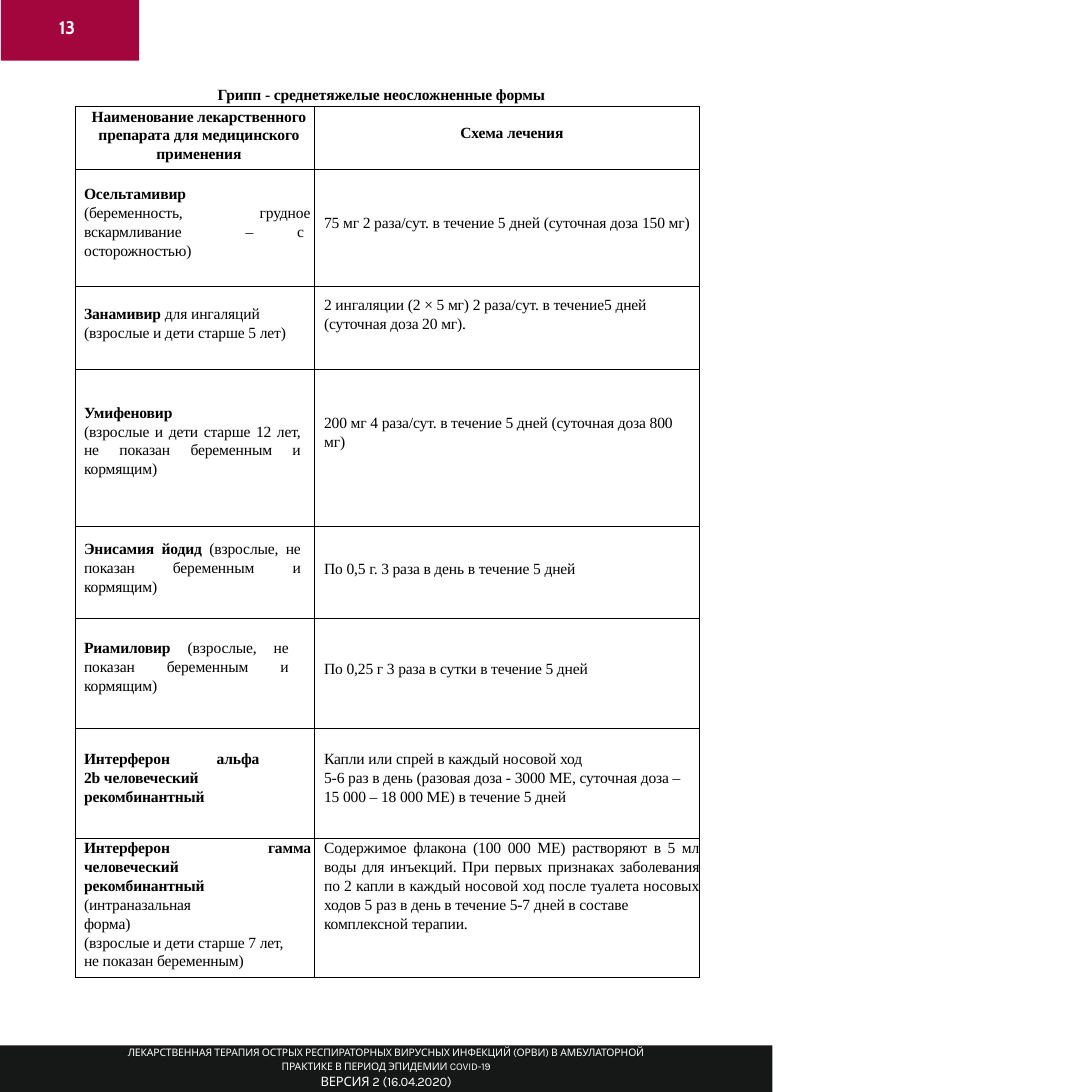
from lxml import etree
from pptx import Presentation, util as u
from pptx.dml.color import RGBColor
from pptx.enum import shapes, text
from pptx.oxml.ns import qn

SIDE = 11.69
COLORS = {"ink": "000000", "light": "FFFFFF", "bar": "161717", "tab": "A3053D"}
SERIF = "Times New Roman"
LEFT, CENTER, JUSTIFY = (text.PP_ALIGN.LEFT, text.PP_ALIGN.CENTER,
                         text.PP_ALIGN.JUSTIFY)
LINE = 14.6  # line pitch of the table, points
COLS = [2.55, 4.13]

# Each row: height, then two cells (top inset, right inset, alignment, paragraphs).
# A paragraph is "bold|regular", or such a text followed by its tab stops.
ROWS = [
    (0.67,
     (0, 0, CENTER, ["Наименование лекарственного|",
                     "препарата для медицинского применения|"]),
     (0.18, 0, CENTER, ["Схема лечения|"])),
    (1.26,
     (0.16, 0, LEFT, ["Осельтамивир|", ("|(беременность,\tгрудное", 1.88),
                      ("|вскармливание\t–\tс", 1.73, 2.28),
                      "|осторожностью)"]),
     (0.47, 0, LEFT, ["|75 мг 2 раза/сут. в течение 5 дней (суточная доза 150 мг)"])),
    (0.88,
     (0.19, 0, LEFT, ["Занамивир| для ингаляций", "|(взрослые и дети старше 5 лет)"]),
     (0.09, 0, LEFT, ["|2 ингаляции (2 × 5 мг) 2 раза/сут. в течение5 дней",
                      "|(суточная доза 20 мг)."])),
    (1.69,
     (0.36, 0.14, JUSTIFY, ["Умифеновир|", "|(взрослые и дети старше 12 лет, "
                            "не показан беременным и кормящим)"]),
     (0.47, 0, LEFT, ["|200 мг 4 раза/сут. в течение 5 дней (суточная доза 800\vмг)"])),
    (0.98,
     (0.13, 0.14, JUSTIFY, ["Энисамия йодид| (взрослые, не показан "
                            "беременным и кормящим)"]),
     (0.34, 0, LEFT, ["|По 0,5 г. 3 раза в день в течение 5 дней"])),
    (1.18,
     (0.21, 0.27, JUSTIFY, ["Риамиловир| (взрослые, не показан "
                            "беременным и кормящим)"]),
     (0.43, 0, LEFT, ["|По 0,25 г 3 раза в сутки в течение 5 дней"])),
    (1.17,
     (0.22, 0, LEFT, [("Интерферон\tальфа|", 1.42), "2b человеческий|",
                      "рекомбинантный|"]),
     (0.22, 0, LEFT, ["|Капли или спрей в каждый носовой ход",
                      "|5-6 раз в день (разовая доза - 3000 ME, суточная доза –"
                      "\v15 000 – 18 000 ME) в течение 5 дней"])),
    (1.49,
     (0, 0, LEFT, [("Интерферон\tгамма|", 1.97), "человеческий|", "рекомбинантный|",
                   "|(интраназальная\vформа)",
                   "|(взрослые и дети старше 7 лет,\vне показан беременным)"]),
     (0, 0, JUSTIFY, ["|Содержимое флакона (100 000 МЕ) растворяют в 5 мл воды для "
                      "инъекций. При первых признаках заболевания по 2 капли в каждый "
                      "носовой ход после туалета носовых ходов 5 раз в день в течение "
                      "5-7 дней в составе", "|комплексной терапии."])),
]


def rgb(name):
    return RGBColor.from_string(COLORS[name])


def style(r, size, font, color, bold=False):
    r.font.size, r.font.name, r.font.bold = u.Pt(size), font, bold
    r.font.color.rgb = rgb(color)
    r._r.get_or_add_rPr().set("spc", "-10")


def add_bar(s, x, y, w, h, color):
    sp = s.shapes.add_shape(shapes.MSO_SHAPE.RECTANGLE, *map(u.Inches, (x, y, w, h)))
    sp.shadow.inherit = False
    sp.fill.solid()
    sp.fill.fore_color.rgb = rgb(color)
    sp.line.fill.background()


def add_label(s, x, y, w, h, lines, font, color, bold=False, align=LEFT):
    """Text box with one (text, size, line pitch, space before) per paragraph."""
    tf = s.shapes.add_textbox(*map(u.Inches, (x, y, w, h))).text_frame
    tf.word_wrap = True
    tf.margin_left = tf.margin_right = tf.margin_top = tf.margin_bottom = 0
    for i, (words, size, pitch, before) in enumerate(lines):
        p = tf.add_paragraph() if i else tf.paragraphs[0]
        p.text = words
        p.alignment = align
        p.space_before = u.Pt(before)
        if pitch:
            p.line_spacing = u.Pt(pitch)
        for r in p.runs:
            style(r, size, font, color, bold)


def add_borders(cell):
    tcPr = cell._tc.get_or_add_tcPr()
    for i, side in enumerate(("lnL", "lnR", "lnT", "lnB")):
        ln = etree.Element(qn("a:" + side), w=str(u.Pt(0.5)))
        fill = etree.SubElement(ln, qn("a:solidFill"))
        etree.SubElement(fill, qn("a:srgbClr"), val=COLORS["ink"])
        tcPr.insert(i, ln)


def fill_cell(cell, left, top, right, align, paragraphs):
    cell.fill.background()
    add_borders(cell)
    cell.margin_left, cell.margin_right = u.Inches(left), u.Inches(right)
    cell.margin_top, cell.margin_bottom = u.Inches(top), 0
    tf = cell.text_frame
    for i, item in enumerate(paragraphs):
        words, *tabs = (item,) if isinstance(item, str) else item
        bold, plain = words.split("|")
        p = tf.add_paragraph() if i else tf.paragraphs[0]
        p.text = bold or plain
        p.alignment = align
        p.line_spacing = u.Pt(LINE)
        for r in p.runs:
            style(r, 12, SERIF, "ink", bool(bold))
        if bold and plain:
            r = p.add_run()
            r.text = plain
            style(r, 12, SERIF, "ink")
        if tabs:
            stops = etree.SubElement(p._p.get_or_add_pPr(), qn("a:tabLst"))
            for pos in tabs:
                etree.SubElement(stops, qn("a:tab"), pos=str(u.Inches(pos)), algn="l")


def add_page_tab(s, x, y, w, h):
    add_bar(s, x, y, w, h, "tab")
    add_label(s, x + 0.62, y + 0.18, 0.3, 0.26, [("13", 14, None, 1)],
              "Cabin", "light", bold=True)


def add_treatment_table(s, x, y):
    add_label(s, x + 1.52, y - 0.23, 3.7, 0.23,
              [("Грипп - среднетяжелые неосложненные формы", 12, None, 1)],
              SERIF, "ink", bold=True)
    frame = s.shapes.add_table(len(ROWS), len(COLS), u.Inches(x), u.Inches(y),
                               u.Inches(sum(COLS)), u.Inches(sum(r[0] for r in ROWS)))
    table = frame.table
    table.first_row = table.horz_banding = False
    for col, width in zip(table.columns, COLS):
        col.width = u.Inches(width)
    for row, (height, *cells) in zip(table.rows, ROWS):
        row.height = u.Inches(height)
        for cell, left, content in zip(row.cells, (0.09, 0.11), cells):
            fill_cell(cell, left, *content)


def add_footer(s, x, y, w, h):
    add_bar(s, x, y, w, h, "bar")
    lines = [("ЛЕКАРСТВЕННАЯ ТЕРАПИЯ ОСТРЫХ РЕСПИРАТОРНЫХ ВИРУСНЫХ ИНФЕКЦИЙ (ОРВИ) "
              "В АМБУЛАТОРНОЙ\vПРАКТИКЕ В ПЕРИОД ЭПИДЕМИИ COVID-19", 8, 10.4, 0.1),
             ("ВЕРСИЯ 2 (16.04.2020)", 10, None, 0.6)]
    add_label(s, x + 1.27, y, w - 2.54, h, lines, "Karla", "light", align=CENTER)


def main():
    prs = Presentation()
    prs.slide_width = prs.slide_height = u.Inches(SIDE)
    s = prs.slides.add_slide(prs.slide_layouts[6])
    add_footer(s, 0, SIDE - 0.5, 8.27, 0.5)
    add_page_tab(s, 0.01, 0, 1.48, 0.65)
    add_treatment_table(s, 0.81, 1.14)
    prs.save("out.pptx")


if __name__ == "__main__":
    main()
